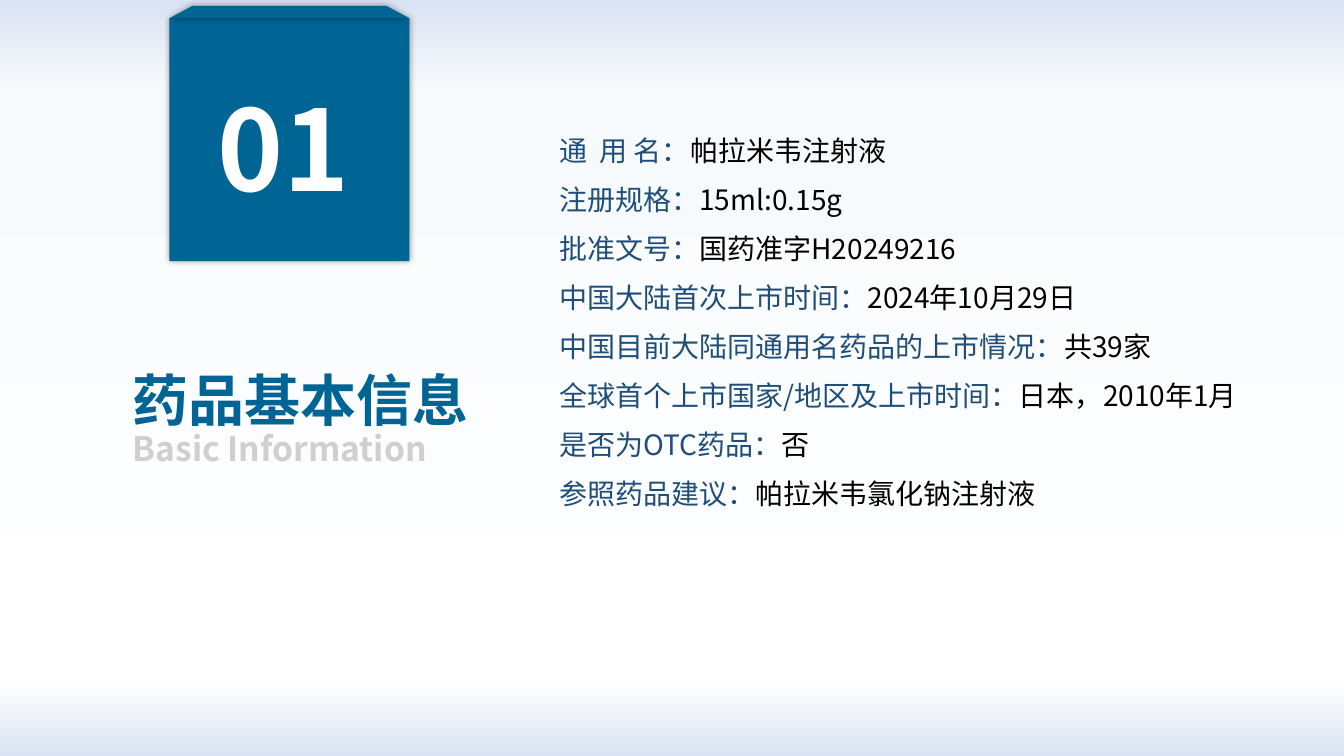
from dataclasses import dataclass

from lxml.etree import SubElement
from pptx import Presentation
from pptx.dml.color import RGBColor
from pptx.enum.shapes import MSO_SHAPE
from pptx.enum.text import MSO_ANCHOR, MSO_AUTO_SIZE, PP_ALIGN
from pptx.oxml.ns import qn
from pptx.util import Cm, Pt

FONT = "Noto Sans CJK SC"
COLORS = {
    "teal": "006494",
    "navy": "1F4E79",
    "black": "000000",
    "white": "FFFFFF",
    "gray": "D0CECE",
    "mist": "F7FAFD",
    "edge": "DAE3F3",
}


@dataclass
class Box:
    left: float
    top: float
    width: float
    height: float

    def lengths(self) -> tuple:
        return Cm(self.left), Cm(self.top), Cm(self.width), Cm(self.height)


@dataclass
class Fact:
    label: str
    value: str


@dataclass
class GradientStop:
    percent: int
    color: str


BACKGROUND = [
    GradientStop(0, "edge"),
    GradientStop(12, "mist"),
    GradientStop(90, "white"),
    GradientStop(100, "edge"),
]
FACTS = [
    Fact("通  用 名：", "帕拉米韦注射液"),
    Fact("注册规格：", "15ml:0.15g"),
    Fact("批准文号：", "国药准字H20249216"),
    Fact("中国大陆首次上市时间：", "2024年10月29日"),
    Fact("中国目前大陆同通用名药品的上市情况：", "共39家"),
    Fact("全球首个上市国家/地区及上市时间：", "日本，2010年1月"),
    Fact("是否为OTC药品：", "否"),
    Fact("参照药品建议：", "帕拉米韦氯化钠注射液"),
]
BADGE = Box(4.27, 0.46, 6.05, 6.12)
FOLD_TOP = 0.15
FOLD_INSET = 0.58


def paint_background(slide, stops: list[GradientStop]) -> None:
    fill = slide.background.fill
    fill.gradient()
    fill.gradient_angle = 270
    stop_list = slide.background._cSld.find(".//" + qn("a:gsLst"))
    stop_list.clear()
    for stop in stops:
        element = SubElement(stop_list, qn("a:gs"), pos=str(stop.percent * 1000))
        SubElement(element, qn("a:srgbClr"), val=COLORS[stop.color])


def style_badge(shape) -> None:
    shape.fill.solid()
    shape.fill.fore_color.rgb = RGBColor.from_string(COLORS["teal"])
    shape.line.fill.background()
    shape.shadow.inherit = False
    effects = shape._element.spPr.find(qn("a:effectLst"))
    shadow = SubElement(effects, qn("a:outerShdw"), blurRad=str(Pt(5)),
                        dist="0", dir="0", algn="ctr", rotWithShape="0")
    color = SubElement(shadow, qn("a:srgbClr"), val=COLORS["black"])
    SubElement(color, qn("a:alpha"), val="40000")


def add_badge(slide, box: Box) -> None:
    style_badge(slide.shapes.add_shape(MSO_SHAPE.RECTANGLE, *box.lengths()))
    right = box.left + box.width
    builder = slide.shapes.build_freeform(Cm(box.left + FOLD_INSET), Cm(FOLD_TOP))
    builder.add_line_segments([
        (Cm(right - FOLD_INSET), Cm(FOLD_TOP)),
        (Cm(right), Cm(box.top)),
        (Cm(box.left), Cm(box.top)),
    ], close=True)
    style_badge(builder.convert_to_shape())


def prepare_frame(shape, box: Box):
    shape.left, shape.top, shape.width, shape.height = box.lengths()
    frame = shape.text_frame
    frame.word_wrap = True
    frame.auto_size = MSO_AUTO_SIZE.SHAPE_TO_FIT_TEXT
    frame.vertical_anchor = MSO_ANCHOR.TOP
    return frame


def add_text_frame(slide, box: Box):
    return prepare_frame(slide.shapes.add_textbox(*box.lengths()), box)


def write(paragraph, text: str, *, size: float, color: str, bold: bool = False,
          align=PP_ALIGN.LEFT, spacing=1.0) -> None:
    paragraph.alignment = align
    paragraph.line_spacing = spacing
    run = paragraph.add_run()
    run.text = text
    run.font.size = Pt(size)
    run.font.bold = bold
    run.font.name = FONT
    run.font.color.rgb = RGBColor.from_string(COLORS[color])
    SubElement(run.font._element, qn("a:ea"), typeface=FONT)


def add_facts(slide, box: Box, facts: list[Fact]) -> None:
    frame = add_text_frame(slide, box)
    for index, fact in enumerate(facts):
        paragraph = frame.add_paragraph() if index else frame.paragraphs[0]
        for text, color in ((fact.label, "navy"), (fact.value, "black")):
            write(paragraph, text, size=20, color=color, spacing=Pt(35))


def main() -> None:
    presentation = Presentation()
    presentation.slide_width = Cm(33.87)
    presentation.slide_height = Cm(19.05)
    slide = presentation.slides.add_slide(presentation.slide_layouts[5])
    paint_background(slide, BACKGROUND)

    add_badge(slide, BADGE)
    number = add_text_frame(slide, Box(5.23, 1.88, 4.14, 3.68))
    write(number.paragraphs[0], "01", size=80, color="white", bold=True,
          align=PP_ALIGN.JUSTIFY)

    title = prepare_frame(slide.shapes.title, Box(1.88, 8.23, 11.4, 2.51))
    write(title.paragraphs[0], "药品基本信息", size=40, color="teal", bold=True,
          align=PP_ALIGN.CENTER, spacing=1.5)
    subtitle = add_text_frame(slide, Box(3.1, 10.16, 8.76, 1.63))
    write(subtitle.paragraphs[0], "Basic Information", size=24, color="gray",
          bold=True, align=PP_ALIGN.JUSTIFY, spacing=1.5)

    add_facts(slide, Box(13.84, 2.84, 17.81, 10.24), FACTS)
    presentation.save("out.pptx")


if __name__ == "__main__":
    main()
